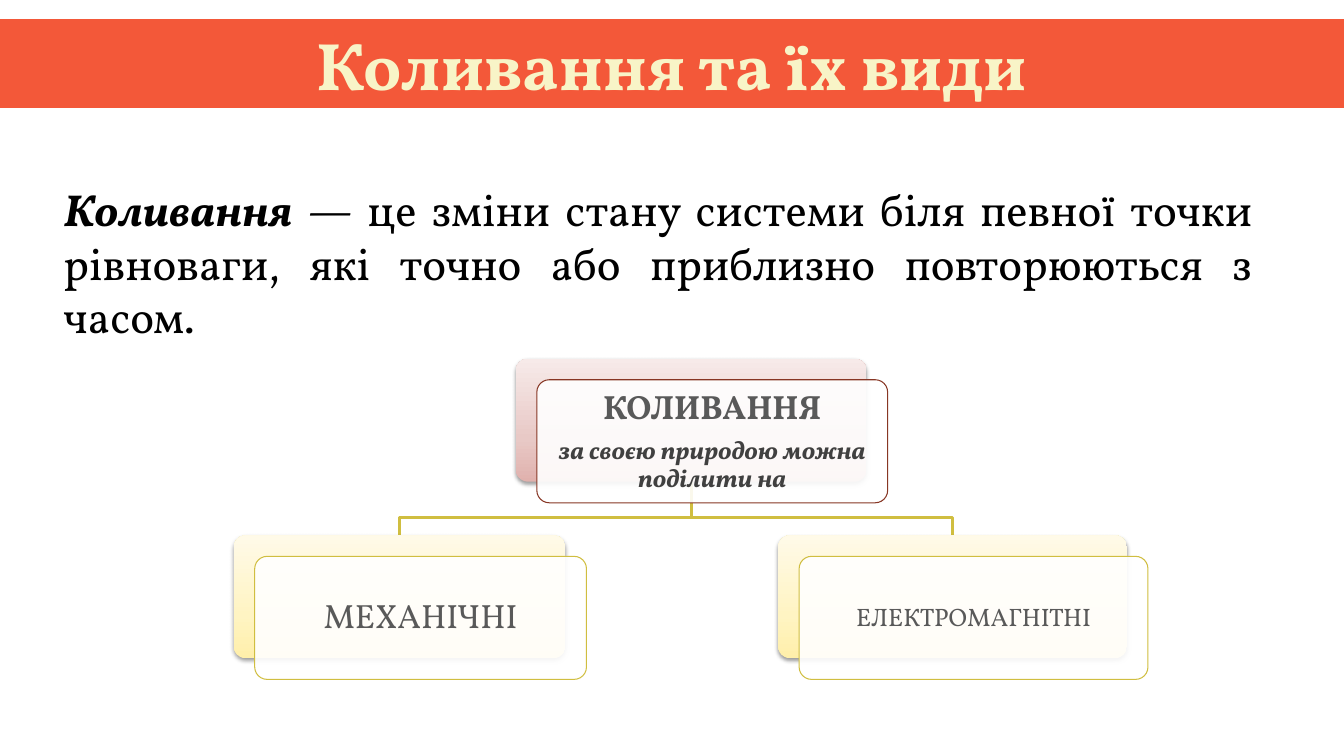
from lxml.etree import SubElement
from pptx import Presentation
from pptx.dml.color import RGBColor
from pptx.enum.shapes import MSO_SHAPE
from pptx.enum.text import MSO_ANCHOR, PP_ALIGN
from pptx.oxml import parse_xml
from pptx.oxml.ns import qn
from pptx.util import Cm, Pt

FONT = "Vollkorn"
NS = 'xmlns:a="http://schemas.openxmlformats.org/drawingml/2006/main"'
GOLD = "D0BE40"
CARD_HEIGHT = 3.1
PANEL_OFFSET = 0.53
PINK_STOPS = [(0, "E0B1AD"), (35, "E8C9C6"), (100, "F7EAE9")]
CREAM_STOPS = [(0, "FFEFAA"), (35, "FFF4C3"), (100, "FFFAE8")]


def color(hex_value):
    return RGBColor.from_string(hex_value)


def add_run(paragraph, text, size, ink, bold=False, italic=False):
    run = paragraph.add_run()
    run.text = text
    run.font.name = FONT
    run.font.size = Pt(size)
    run.font.bold = bold
    run.font.italic = italic
    run.font.color.rgb = color(ink)
    return run


def add_block(slide, preset, box, fill=None, line=None):
    left, top, width, height = box
    block = slide.shapes.add_shape(preset, Cm(left), Cm(top), Cm(width), Cm(height))
    block.shadow.inherit = False
    if fill:
        block.fill.solid()
        block.fill.fore_color.rgb = color(fill)
    if line:
        block.line.color.rgb = color(line)
        block.line.width = Pt(0.75)
    else:
        block.line.fill.background()
    return block


def add_title_band(slide, box, title):
    band = add_block(slide, MSO_SHAPE.RECTANGLE, box, fill="F35839")
    band.text_frame.vertical_anchor = MSO_ANCHOR.MIDDLE
    paragraph = band.text_frame.paragraphs[0]
    paragraph.alignment = PP_ALIGN.CENTER
    run = add_run(paragraph, title, 48, "F8F4C7", bold=True)
    # Thin grey outline around the letters
    run.font._element.insert(0, parse_xml(
        f'<a:ln {NS} w="12700"><a:solidFill><a:srgbClr val="BFBFBF"/></a:solidFill></a:ln>'))


def add_definition(slide, box, term, meaning):
    left, top, width, height = box
    definition = slide.shapes.add_textbox(Cm(left), Cm(top), Cm(width), Cm(height))
    definition.text_frame.word_wrap = True
    paragraph = definition.text_frame.paragraphs[0]
    paragraph.alignment = PP_ALIGN.JUSTIFY
    add_run(paragraph, term, 32, "000000", bold=True, italic=True)
    add_run(paragraph, meaning, 32, "000000")


def add_backing(slide, box, stops):
    backing = add_block(slide, MSO_SHAPE.ROUNDED_RECTANGLE, box)
    backing.adjustments[0] = 0.1
    # Gradient rising from the bottom edge
    stop_xml = "".join(
        f'<a:gs pos="{place * 1000}"><a:srgbClr val="{ink}"/></a:gs>' for place, ink in stops)
    properties = backing._element.spPr
    properties.insert(2, parse_xml(
        f'<a:gradFill {NS} rotWithShape="1"><a:gsLst>{stop_xml}</a:gsLst>'
        '<a:lin ang="16200000" scaled="0"/></a:gradFill>'))
    # Soft shadow below
    properties.find(qn("a:effectLst")).append(parse_xml(
        f'<a:outerShdw {NS} blurRad="{Pt(3.1)}" dist="{Pt(1.6)}" dir="5400000" rotWithShape="0">'
        '<a:srgbClr val="000000"><a:alpha val="38000"/></a:srgbClr></a:outerShdw>'))


def add_card(slide, box, stops, line, lines, inset=0.25):
    left, top, width, height = box
    add_backing(slide, box, stops)
    # Translucent front panel with the label
    panel_box = (left + PANEL_OFFSET, top + PANEL_OFFSET, width, height)
    panel = add_block(slide, MSO_SHAPE.ROUNDED_RECTANGLE, panel_box, "FFFFFF", line)
    panel.adjustments[0] = 0.1
    panel_color = panel._element.spPr.find(qn("a:solidFill")).find(qn("a:srgbClr"))
    SubElement(panel_color, qn("a:alpha"), val="90000")
    frame = panel.text_frame
    frame.word_wrap = True
    frame.vertical_anchor = MSO_ANCHOR.MIDDLE
    frame.margin_left = frame.margin_right = Cm(inset)
    frame.margin_top = frame.margin_bottom = Cm(inset)
    for index, (text, style) in enumerate(lines):
        paragraph = frame.add_paragraph() if index else frame.paragraphs[0]
        paragraph.alignment = PP_ALIGN.CENTER
        paragraph.line_spacing = 0.9
        paragraph.space_after = Pt(0.35 * style["size"])
        add_run(paragraph, text, **style)


def add_branch(slide, parent, child):
    def center(box):
        return box[0] + box[2] / 2

    start, end = parent[1] + parent[3], child[1]
    bend = start + (end - start) * 0.66
    points = [(center(parent), start), (center(parent), bend),
              (center(child), bend), (center(child), end)]
    corners = [(Cm(x), Cm(y)) for x, y in points]
    builder = slide.shapes.build_freeform(*corners[0])
    builder.add_line_segments(corners[1:], close=False)
    branch = builder.convert_to_shape()
    branch.shadow.inherit = False
    branch.fill.background()
    branch.line.color.rgb = color(GOLD)
    branch.line.width = Pt(2)


def add_classification(slide, box):
    left, top, width, height = box
    child_top = top + 4.45
    oscillations = (left + 7.11, top, 8.84, CARD_HEIGHT)
    mechanical = (left, child_top, 8.36, CARD_HEIGHT)
    electromagnetic = (left + 13.72, child_top, 8.79, CARD_HEIGHT)
    for child in (electromagnetic, mechanical):
        add_branch(slide, oscillations, child)
    add_card(slide, oscillations, PINK_STOPS, "873624", [
        ("КОЛИВАННЯ", dict(size=24, ink="595959", bold=True)),
        ("за своєю природою можна поділити на",
         dict(size=18, ink="404040", bold=True, italic=True)),
    ])
    add_card(slide, mechanical, CREAM_STOPS, GOLD,
             [("МЕХАНІЧНІ", dict(size=24, ink="595959"))])
    add_card(slide, electromagnetic, CREAM_STOPS, GOLD,
             [("ЕЛЕКТРОМАГНІТНІ", dict(size=18, ink="595959"))], inset=0.18)


def main():
    deck = Presentation()
    deck.slide_width, deck.slide_height = Cm(33.87), Cm(19.05)
    slide = deck.slides.add_slide(deck.slide_layouts[6])
    add_title_band(slide, (0, 0.48, 33.87, 2.24), "Коливання та їх види")
    add_definition(
        slide, (1.35, 4.45, 30.48, 3.05), "Коливання ",
        "— це зміни стану системи біля певної точки рівноваги, "
        "які точно або приблизно повторюються з часом.")
    add_classification(slide, (5.89, 9.04, 22.51, 8.08))
    deck.save("out.pptx")


if __name__ == "__main__":
    main()
